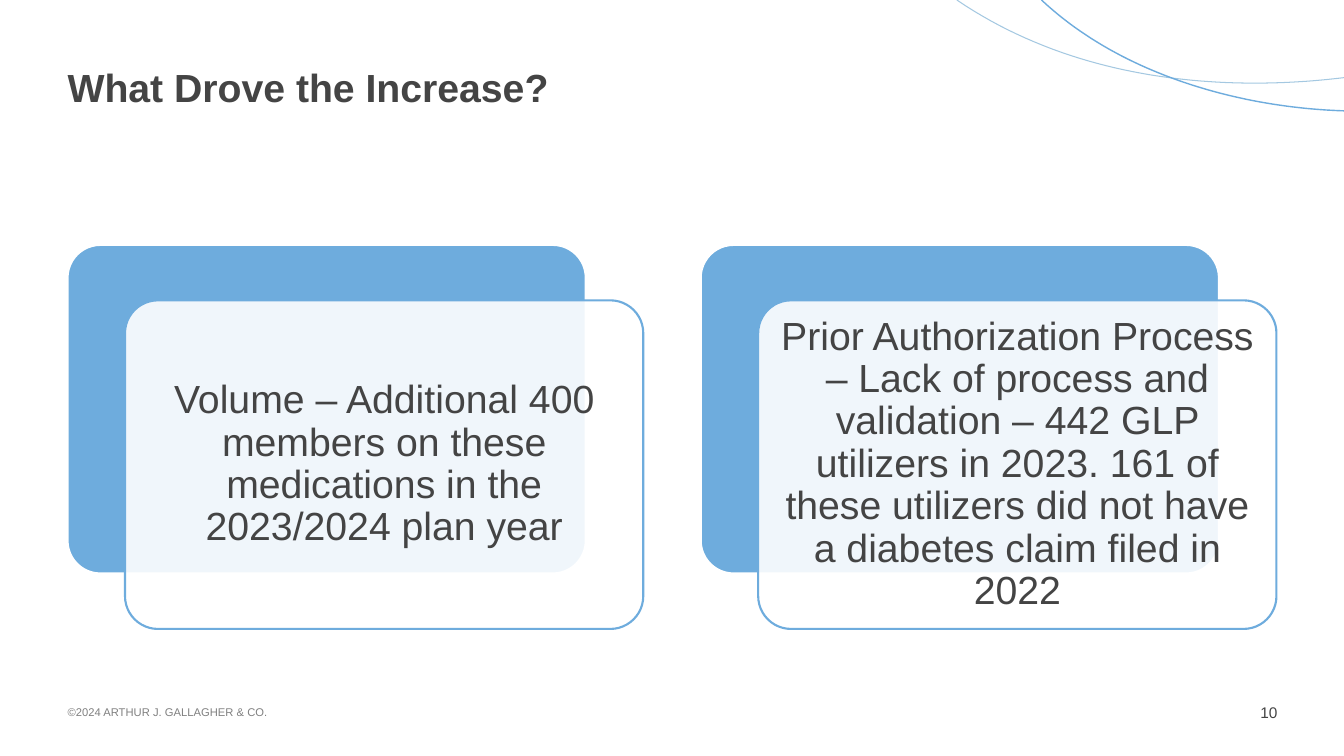
from lxml import etree
from pptx import Presentation
from pptx.dml.color import RGBColor
from pptx.enum.shapes import MSO_SHAPE as SHAPE
from pptx.enum.text import MSO_ANCHOR as ANCHOR, PP_ALIGN as ALIGN
from pptx.oxml.ns import qn
from pptx.util import Inches, Pt

COLORS = {
    "white": "FFFFFF",
    "blue": "6EACDD",
    "pale_blue": "A4C8E1",
    "text": "444444",
    "footer": "808080",
}
CARD_SIZE = (5.14, 3.26)
CARD_LEFT, CARD_TOP, CARD_PITCH = 0.67, 2.43, 6.28
FRONT_DX, FRONT_DY = 0.57, 0.55
CARD_TEXTS = [
    "Volume – Additional 400 members on these medications in the "
    "2023/2024 plan year",
    "Prior Authorization Process – Lack of process and validation – 442 GLP "
    "utilizers in 2023. 161 of these utilizers did not have a diabetes claim "
    "filed in 2022",
]
ARCS = [
    ([(13.33, 0.77), (12.43, 0.88), (10.83, 0.91), (9.49, 0)], "pale_blue", 0.75),
    ([(13.33, 1.1), (12.34, 1.07), (11.14, 0.76), (10.33, 0)], "blue", 1),
]


def bezier_point(controls, t):
    weights = ((1 - t) ** 3, 3 * t * (1 - t) ** 2, 3 * t ** 2 * (1 - t), t ** 3)
    return tuple(
        Inches(sum(w * c[axis] for w, c in zip(weights, controls)))
        for axis in (0, 1)
    )


class SlideBuilder:
    font = "Arial"

    def __init__(self, slide):
        self.slide = slide

    def color(self, name):
        return RGBColor.from_string(COLORS[name])

    def outline(self, sp, color, width):
        sp.shadow.inherit = False
        sp.line.color.rgb = self.color(color)
        sp.line.width = Pt(width)

    def set_text(self, sp, text, size, color="text", bold=False,
                 align=ALIGN.LEFT, anchor=ANCHOR.TOP, inset=0, wrap=True,
                 spacing=None):
        tf = sp.text_frame
        tf.word_wrap = wrap
        tf.vertical_anchor = anchor
        tf.margin_left = tf.margin_right = Inches(inset)
        tf.margin_top = tf.margin_bottom = Inches(inset)
        p = tf.paragraphs[0]
        p.text = text
        p.alignment = align
        p.line_spacing = spacing
        p.font.name = self.font
        p.font.size = Pt(size)
        p.font.bold = bold
        p.font.color.rgb = self.color(color)

    def text(self, x, y, w, h, text, size, **style):
        sp = self.slide.shapes.add_textbox(*map(Inches, (x, y, w, h)))
        self.set_text(sp, text, size, **style)

    def arc(self, controls, color, width, steps=48):
        points = [bezier_point(controls, i / steps) for i in range(steps + 1)]
        builder = self.slide.shapes.build_freeform(*points[0])
        builder.add_line_segments(points[1:], close=False)
        sp = builder.convert_to_shape()
        sp.fill.background()
        self.outline(sp, color, width)

    def panel(self, x, y, fill, line, opacity=None):
        sp = self.slide.shapes.add_shape(
            SHAPE.ROUNDED_RECTANGLE, *map(Inches, (x, y, *CARD_SIZE)))
        sp.adjustments[0] = 0.1
        sp.fill.solid()
        sp.fill.fore_color.rgb = self.color(fill)
        if opacity is not None:
            rgb = sp.element.spPr.find(qn("a:solidFill"))[0]
            etree.SubElement(rgb, qn("a:alpha")).set("val", str(opacity * 1000))
        self.outline(sp, line, 1.5)
        return sp

    def card(self, x, y, text):
        self.panel(x, y, "blue", "white")
        front = self.panel(x + FRONT_DX, y + FRONT_DY, "white", "blue", 90)
        self.set_text(front, text, 28, align=ALIGN.CENTER,
                      anchor=ANCHOR.MIDDLE, inset=0.12, spacing=0.9)


def main():
    prs = Presentation()
    prs.slide_width, prs.slide_height = Inches(13.33), Inches(7.5)
    s = SlideBuilder(prs.slides.add_slide(prs.slide_layouts[6]))
    for controls, color, width in ARCS:
        s.arc(controls, color, width)
    s.text(0.67, 0.68, 10.22, 0.53, "What Drove the Increase?", 28,
           bold=True, spacing=0.9)
    s.text(0.67, 7, 2.01, 0.13, "©2024 ARTHUR J. GALLAGHER & CO.", 8,
           color="footer", anchor=ANCHOR.MIDDLE, wrap=False)
    s.text(12.48, 6.98, 0.19, 0.19, "10", 11, align=ALIGN.RIGHT, wrap=False)
    for i, text in enumerate(CARD_TEXTS):
        s.card(CARD_LEFT + i * CARD_PITCH, CARD_TOP, text)
    prs.save("out.pptx")


if __name__ == "__main__":
    main()
